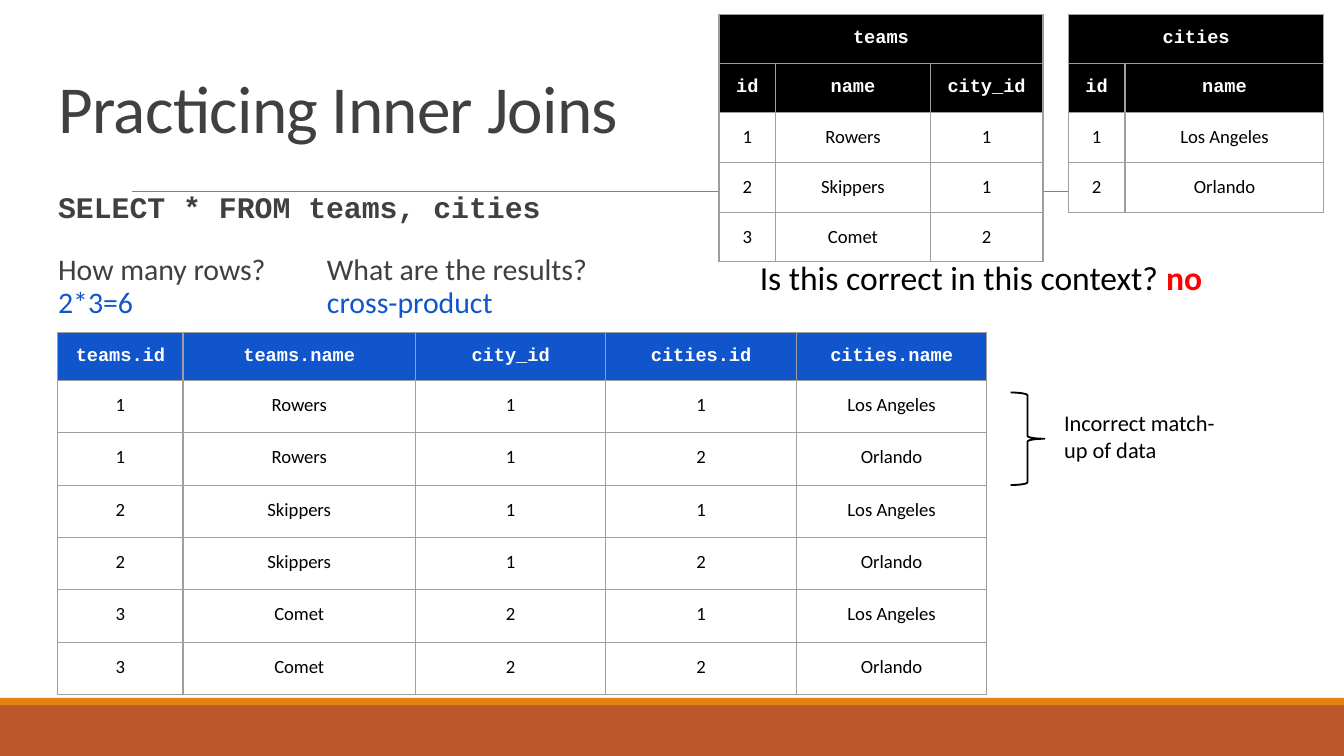
from itertools import product

from lxml import etree
from pptx import Presentation, util as u
from pptx.dml.color import RGBColor
from pptx.enum import shapes, text
from pptx.oxml import ns

COLORS = {
    "black": "000000", "white": "FFFFFF", "title": "404040", "blue": "1155CC",
    "red": "FF0000", "border": "9E9E9E", "rule": "808080",
    "rust": "BD582C", "orange": "E48312",
}
SANS, MONO = "Calibri", "Courier New"
TEAMS = [("1", "Rowers", "1"), ("2", "Skippers", "1"), ("3", "Comet", "2")]
CITIES = [("1", "Los Angeles"), ("2", "Orlando")]


def color(name):
    return RGBColor.from_string(COLORS[name])


class JoinSlide:
    """Draws the elements of a slide about SQL joins in one shared style."""

    inset = u.Cm(0.25)

    def __init__(self, presentation):
        self.slide = presentation.slides.add_slide(presentation.slide_layouts[6])

    def style(self, paragraph, size, shade, font=SANS, bold=False):
        for run in paragraph.runs:
            run.font.name = font
            run.font.size = u.Pt(size)
            run.font.bold = bold
            run.font.color.rgb = color(shade)

    def band(self, top, height, shade):
        shape = self.slide.shapes.add_shape(
            shapes.MSO_SHAPE.RECTANGLE, 0, u.Cm(top), u.Cm(25.4), u.Cm(height))
        shape.shadow.inherit = False
        shape.fill.solid()
        shape.fill.fore_color.rgb = color(shade)
        shape.line.fill.background()

    def rule(self, left, right, y):
        line = self.slide.shapes.add_connector(
            shapes.MSO_CONNECTOR.STRAIGHT, u.Cm(left), u.Cm(y), u.Cm(right), u.Cm(y))
        line.line.color.rgb = color("rule")
        line.line.width = u.Pt(0.5)
        etree.SubElement(line._element.spPr, ns.qn("a:effectLst"))

    def brace(self, left, top, width, height):
        shape = self.slide.shapes.add_shape(
            shapes.MSO_SHAPE.RIGHT_BRACE, u.Cm(left), u.Cm(top), u.Cm(width), u.Cm(height))
        shape.shadow.inherit = False
        shape.fill.background()
        shape.line.color.rgb = color("black")
        shape.line.width = u.Pt(1)

    def text_box(self, left, top, width, height, lines, size, shade,
                 margin_left=0.25, margin_top=0.25, spacing=None):
        box = self.slide.shapes.add_textbox(u.Cm(left), u.Cm(top), u.Cm(width), u.Cm(height))
        frame = box.text_frame
        frame.word_wrap = True
        frame.margin_left, frame.margin_right = u.Cm(margin_left), self.inset
        frame.margin_top = frame.margin_bottom = u.Cm(margin_top)
        frame.text = "\n".join(lines)
        for paragraph in frame.paragraphs:
            if spacing:
                paragraph.line_spacing = spacing
            self.style(paragraph, size, shade)
        return frame.paragraphs

    def tab_stop(self, paragraph, position):
        tabs = etree.SubElement(paragraph._p.get_or_add_pPr(), ns.qn("a:tabLst"))
        etree.SubElement(tabs, ns.qn("a:tab"), pos=str(u.Cm(position)), algn="l")

    def cell(self, cell, value, is_header, header_fill, body_fill):
        cell.text = value
        cell.margin_left = cell.margin_right = self.inset
        cell.margin_top = cell.margin_bottom = self.inset
        paragraph = cell.text_frame.paragraphs[0]
        paragraph.alignment = text.PP_ALIGN.CENTER
        if is_header:
            self.style(paragraph, 10, "white", MONO, True)
        else:
            self.style(paragraph, 10, "black")
        properties = cell._tc.get_or_add_tcPr()
        for side in ("lnL", "lnR", "lnT", "lnB"):
            border = etree.SubElement(properties, ns.qn(f"a:{side}"), w=str(u.Pt(0.75)))
            solid = etree.SubElement(border, ns.qn("a:solidFill"))
            etree.SubElement(solid, ns.qn("a:srgbClr"), val=COLORS["border"])
        fill = header_fill if is_header else body_fill
        if fill:
            cell.fill.solid()
            cell.fill.fore_color.rgb = color(fill)
        else:
            cell.fill.background()

    def table(self, left, top, widths, headers, rows, header_fill,
              row_height, body_fill=None, name=None):
        head = [[name] + [""] * (len(widths) - 1)] if name else []
        head.append(headers)
        grid = head + rows
        heights = [0.9] * len(head) + [row_height] * len(rows)
        table = self.slide.shapes.add_table(
            len(grid), len(widths), u.Cm(left), u.Cm(top),
            u.Cm(sum(widths)), u.Cm(sum(heights))).table
        table.first_row = table.horz_banding = False
        for column, width in zip(table.columns, widths):
            column.width = u.Cm(width)
        for r, values in enumerate(grid):
            table.rows[r].height = u.Cm(heights[r])
            for c, value in enumerate(values):
                self.cell(table.cell(r, c), value, r < len(head), header_fill, body_fill)
        if name:
            table.cell(0, 0).merge(table.cell(0, len(widths) - 1))


def main():
    presentation = Presentation()
    presentation.slide_width, presentation.slide_height = u.Cm(25.4), u.Cm(14.29)
    page = JoinSlide(presentation)

    page.band(13.33, 0.96, "rust")
    page.band(13.19, 0.14, "orange")
    page.rule(2.49, 23.24, 3.62)

    page.table(1.09, 6.29, [2.37, 4.39, 3.6, 3.6, 3.6],
               ["teams.id", "teams.name", "city_id", "cities.id", "cities.name"],
               [team + city for team, city in product(TEAMS, CITIES)], "blue", 0.99)

    title = page.text_box(0.86, 1.24, 23.67, 1.6, ["Practicing Inner Joins"],
                          36, "title", spacing=0.85)[0]
    title.runs[0]._r.get_or_add_rPr().set("spc", "-40")

    query, questions, answers = page.text_box(
        0.46, 3.4, 13.44, 3,
        ["SELECT * FROM teams, cities",
         "How many rows?\tWhat are the results?",
         "2*3=6\tcross-product"],
        16, "title", margin_left=0.64, spacing=0.9)
    page.style(query, 16, "title", MONO, True)
    questions.space_before = u.Pt(16)
    for paragraph in (questions, answers):
        page.tab_stop(paragraph, 5.08)
    page.style(answers, 16, "blue")

    page.table(13.59, 0.28, [1.07, 2.92, 2.13], ["id", "name", "city_id"],
               TEAMS, "black", 0.94, "white", "teams")
    page.table(20.19, 0.28, [1.07, 3.76], ["id", "name"],
               CITIES, "black", 0.94, "white", "cities")

    check = page.text_box(13.72, 4.72, 12.73, 1.02, ["Is this correct in this context? "],
                          18, "black", margin_left=0.64, margin_top=0.13)[0]
    check.add_run().text = "no"
    page.style(check, 18, "black")
    verdict = check.runs[1].font
    verdict.bold = True
    verdict.color.rgb = color("red")

    page.brace(19.1, 7.42, 0.64, 1.75)
    page.text_box(19.86, 7.6, 3.58, 1.27, ["Incorrect match-up of data"],
                  12, "black", margin_top=0.13)
    presentation.save("out.pptx")


if __name__ == "__main__":
    main()
